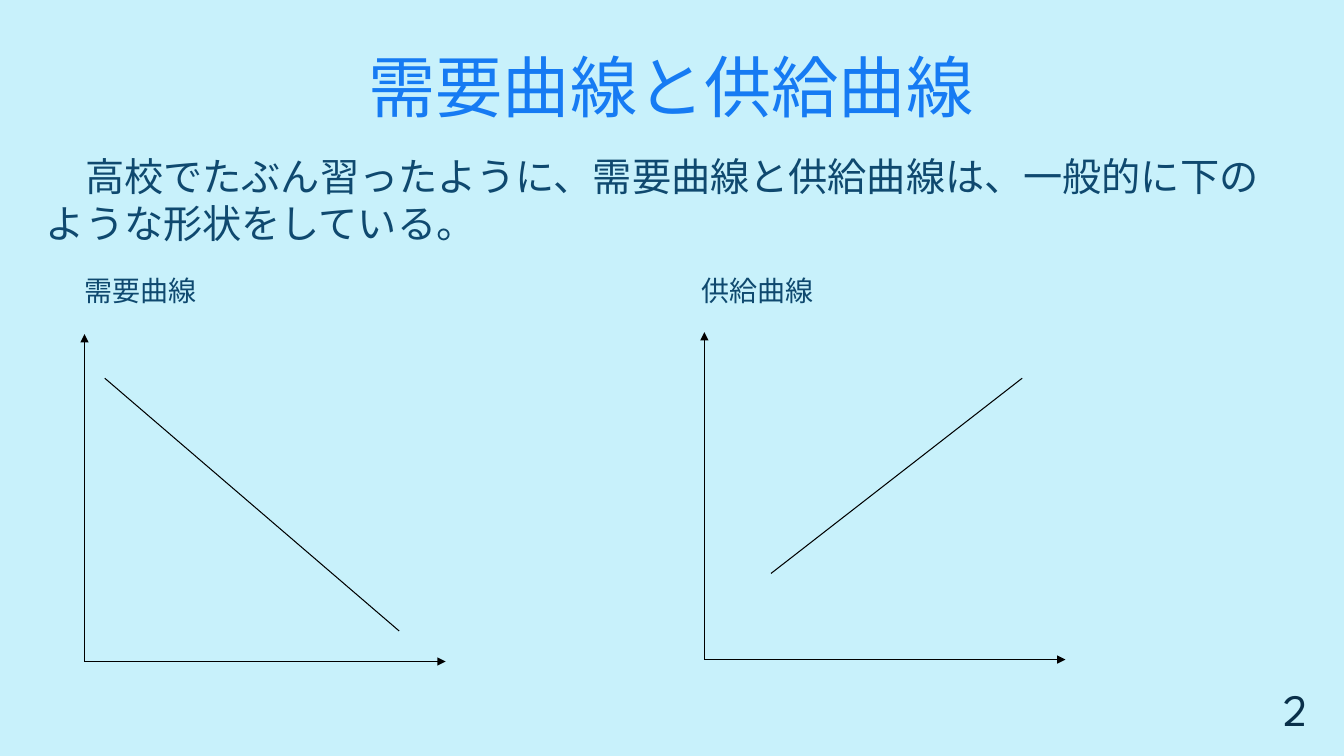
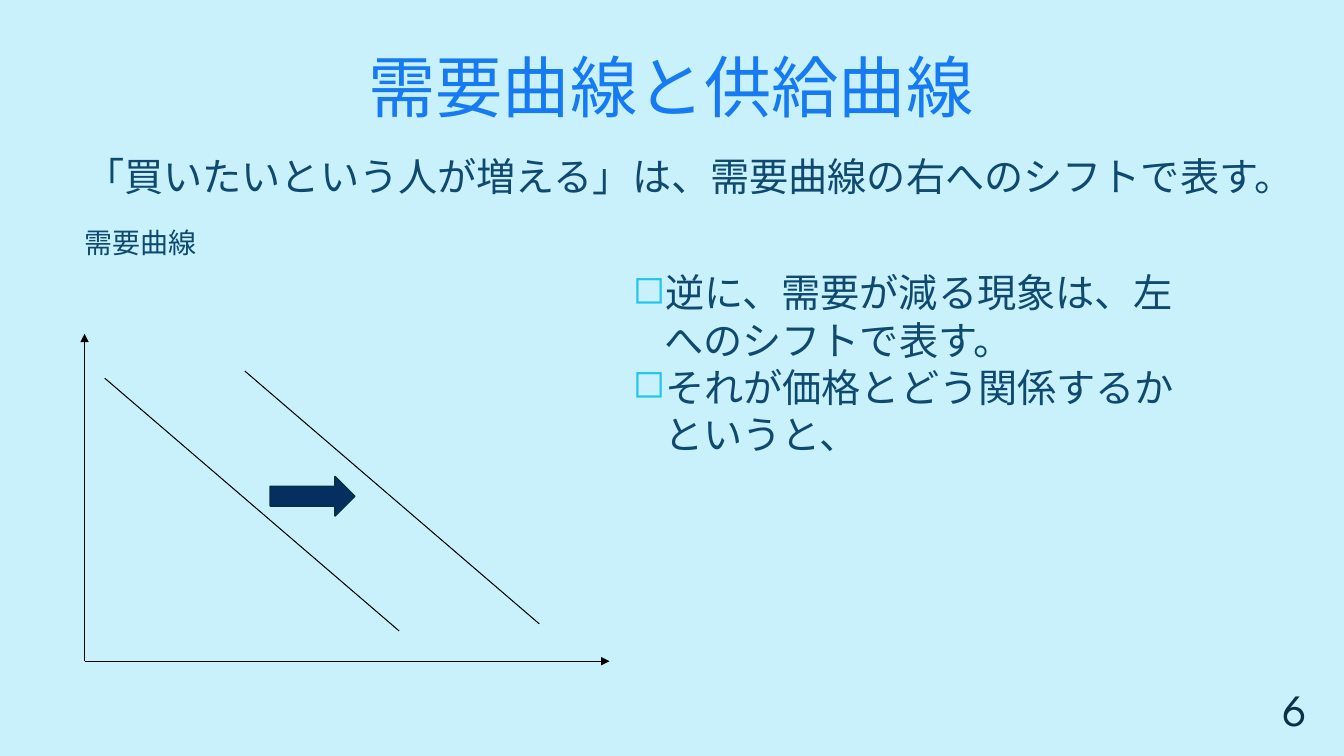
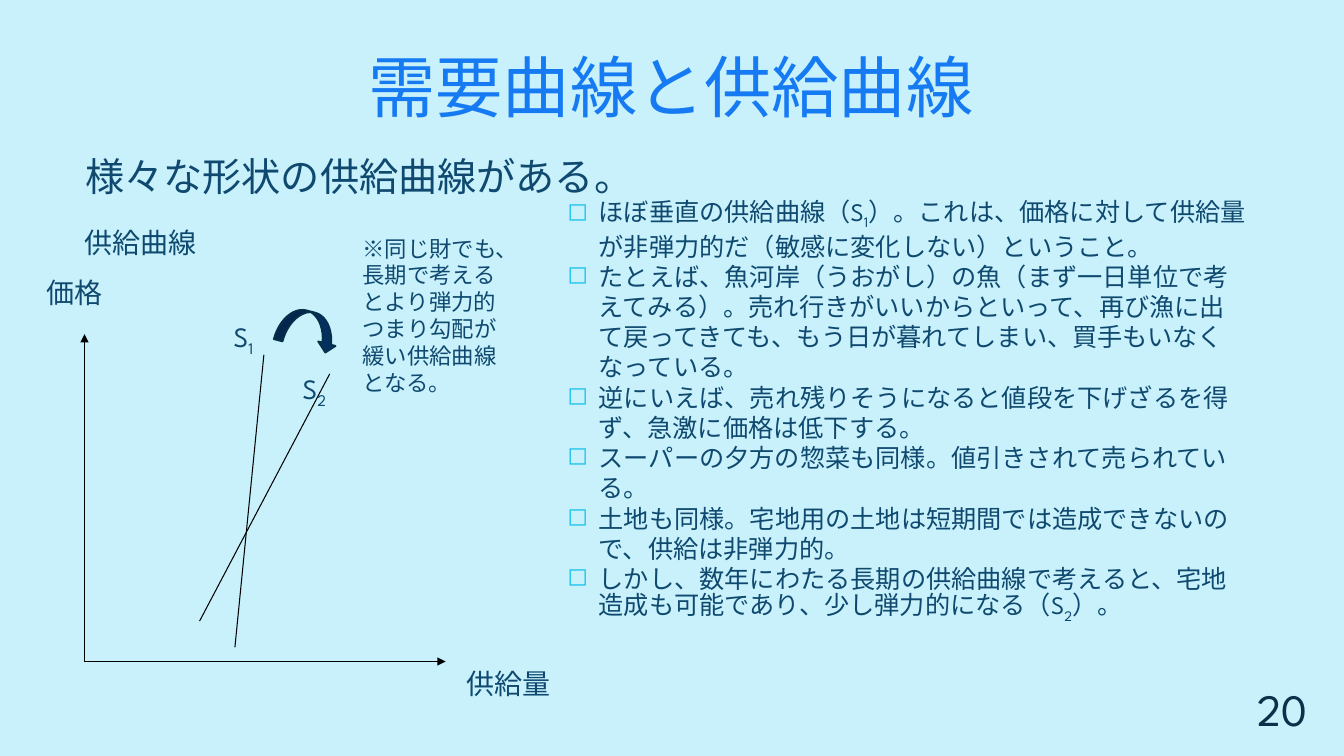
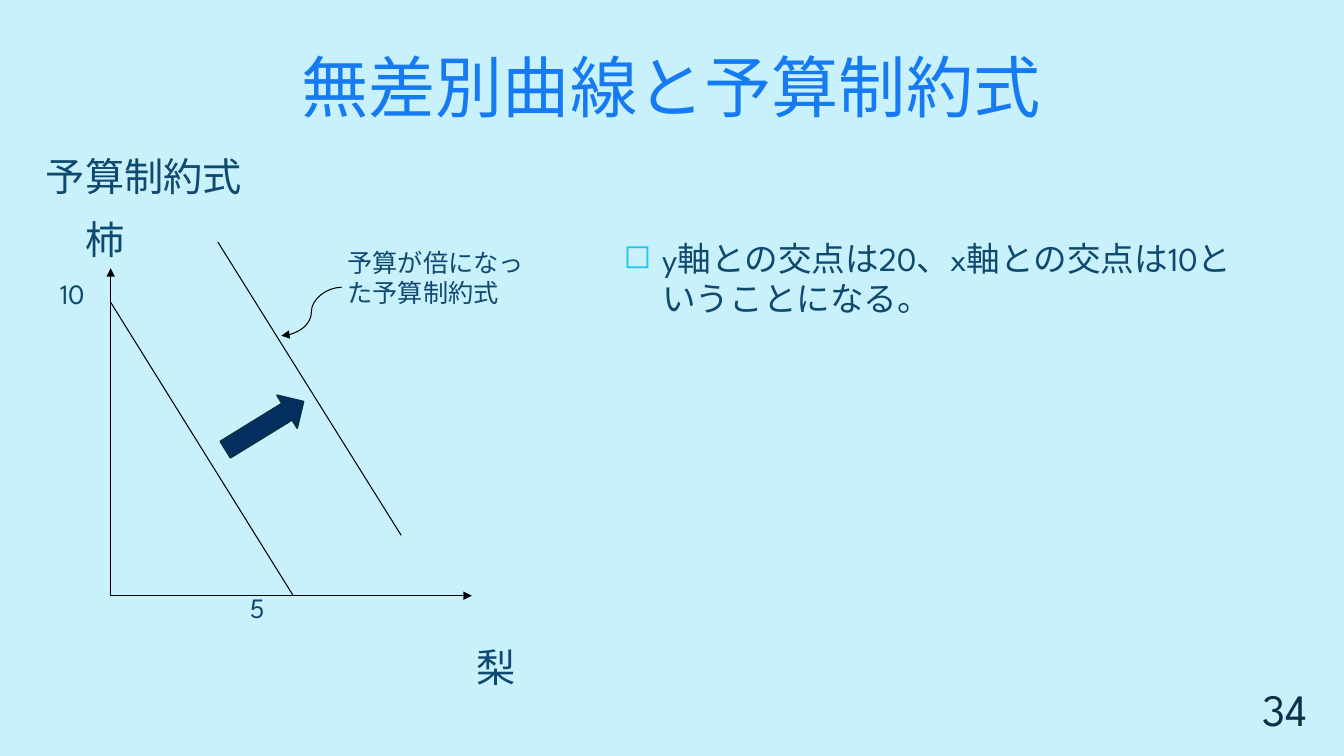
from dataclasses import dataclass

from lxml import etree
from pptx import Presentation
from pptx.dml.color import RGBColor
from pptx.enum import lang, shapes, text
from pptx.oxml import ns
from pptx.util import Cm, Pt


@dataclass(frozen=True)
class Theme:
    font: str = "League Spartan"
    line_height: float = 1.2
    background: str = "C8F1FB"
    title: str = "167BF3"
    body: str = "0F496F"
    number: str = "0A304A"
    bullet: str = "22C5ED"
    curve: str = "000000"
    arrow: str = "052F61"
    arrow_edge: str = "043148"
    title_size: int = 48
    number_size: int = 32
    lead_size: int = 28
    medium_size: int = 24
    label_size: int = 20
    small_size: int = 18
    note_size: int = 16


theme = Theme()
color = RGBColor.from_string


def add_text(page, content, left, top, width=4, height=1, box=None, size=theme.label_size,
             fill=theme.body, align=text.PP_ALIGN.LEFT, anchor=text.MSO_ANCHOR.TOP,
             indent=0, bullet_gap=0):
    """Write one paragraph per line of content; text between underscores is subscript."""
    box = box or page.shapes.add_textbox(0, 0, 0, 0)
    box.left, box.top, box.width, box.height = Cm(left), Cm(top), Cm(width), Cm(height)
    frame = box.text_frame
    frame.word_wrap = True
    frame.auto_size = text.MSO_AUTO_SIZE.NONE
    frame.vertical_anchor = anchor
    for row, line in enumerate(content.split("\n")):
        para = frame.add_paragraph() if row else frame.paragraphs[0]
        para.alignment = align
        para.line_spacing = Pt(size * theme.line_height)
        para.space_before = Pt(0)
        properties = para._p.get_or_add_pPr()
        properties.set("marL", str(Cm(bullet_gap)))
        properties.set("indent", str(Cm(indent - bullet_gap)))
        if bullet_gap:
            bullet_color = etree.SubElement(properties, ns.qn("a:buClr"))
            etree.SubElement(bullet_color, ns.qn("a:srgbClr"), val=theme.bullet)
            etree.SubElement(properties, ns.qn("a:buChar"), char="◻")
        for part, words in enumerate(line.split("_")):
            span = para.add_run()
            span.text = words
            span.font.size = Pt(size)
            span.font.name = theme.font
            span.font.color.rgb = color(fill)
            span.font.language_id = lang.MSO_LANGUAGE_ID.JAPANESE
            run_format = span._r.get_or_add_rPr()
            etree.SubElement(run_format, ns.qn("a:ea"), typeface=theme.font)
            if part % 2:
                run_format.set("baseline", "-25000")


def add_line(page, start, end, arrow=False, kind=shapes.MSO_CONNECTOR.STRAIGHT):
    line = page.shapes.add_connector(kind, *map(Cm, start + end))
    line.line.color.rgb = color(theme.curve)
    line.line.width = Pt(0.75)
    if arrow:
        etree.SubElement(line.line._get_or_add_ln(), ns.qn("a:tailEnd"), type="triangle")
    etree.SubElement(line._element.spPr, ns.qn("a:effectLst"))


deck = Presentation()
deck.slide_width, deck.slide_height = Cm(33.87), Cm(19.05)
master_fill = deck.slide_master.background.fill
master_fill.solid()
master_fill.fore_color.rgb = color(theme.background)

# Title, page number, opening sentence and its first-line indent
market = "需要曲線と供給曲線"
pages = []
for title, number, lead, indent in [
    (market, "2", "高校でたぶん習ったように、需要曲線と供給曲線は、一般的に下のような形状をしている。", 0.99),
    (market, "6", "「買いたいという人が増える」は、需要曲線の右へのシフトで表す。", 0.99),
    (market, "20", "様々な形状の供給曲線がある。", 0.99),
    ("無差別曲線と予算制約式", "34", "予算制約式", 0),
]:
    page = deck.slides.add_slide(deck.slide_layouts[5])
    add_text(page, title, 0.91, 0.91, 32, 2.39, box=page.shapes.title, size=theme.title_size,
             fill=theme.title, align=text.PP_ALIGN.CENTER, anchor=text.MSO_ANCHOR.BOTTOM)
    add_text(page, lead, 0.91, 3.71, 32, 2.6, size=theme.lead_size, indent=indent)
    add_text(page, number, 31.29, 17.12, 1.91, 1.55, size=theme.number_size, fill=theme.number,
             align=text.PP_ALIGN.RIGHT, anchor=text.MSO_ANCHOR.BOTTOM)
    pages.append(page)
shapes_page, shift_page, elasticity_page, budget_page = pages

# Axes: origin and length of the horizontal one
axis_height, axis_length = 8.25, 9.1
for page, x, y, length in [
    (shapes_page, 2.13, 16.67, axis_length),
    (shapes_page, 17.75, 16.62, axis_length),
    (shift_page, 2.13, 16.66, 13.23),
    (elasticity_page, 2.13, 16.67, axis_length),
    (budget_page, 2.79, 15.01, axis_length),
]:
    add_line(page, (x, y), (x, y - axis_height), arrow=True)
    add_line(page, (x, y), (x + length, y), arrow=True)

# Demand, supply and budget lines
demand = ((2.64, 9.53), (10.06, 15.9))
for page, start, end in [
    (shapes_page, *demand),
    (shapes_page, (19.43, 14.45), (25.76, 9.53)),
    (shift_page, *demand),
    (shift_page, (6.17, 9.35), (13.59, 15.72)),
    (elasticity_page, (6.65, 8.94), (5.92, 16.31)),
    (elasticity_page, (8.31, 9.42), (5.03, 15.65)),
    (budget_page, (2.79, 7.62), (7.39, 15.01)),
    (budget_page, (5.49, 6.1), (10.11, 13.49)),
]:
    add_line(page, start, end)
add_line(budget_page, (8.61, 7.24), (7.09, 8.46), arrow=True, kind=shapes.MSO_CONNECTOR.CURVE)

# Block arrows showing the shifts
right_arrow = shapes.MSO_SHAPE.RIGHT_ARROW
for page, kind, place, rotation in [
    (shift_page, right_arrow, (6.81, 12.01, 2.13, 0.99), 0),
    (elasticity_page, shapes.MSO_SHAPE.CURVED_DOWN_ARROW, (6.99, 7.85, 1.57, 0.91), 14.6),
    (budget_page, right_arrow, (5.51, 10.24, 2.31, 0.97), 328.4),
]:
    shift = page.shapes.add_shape(kind, *map(Cm, place))
    shift.rotation = rotation
    shift.shadow.inherit = False
    shift.fill.solid()
    shift.fill.fore_color.rgb = color(theme.arrow)
    shift.line.color.rgb = color(theme.arrow_edge)
    shift.line.width = Pt(1.25)

# Labels of graphs, axes and curves
for page, label, left, top, size in [
    (shapes_page, "需要曲線", 1.89, 6.76, theme.label_size),
    (shapes_page, "供給曲線", 17.43, 6.76, theme.label_size),
    (shift_page, "需要曲線", 1.89, 5.57, theme.label_size),
    (elasticity_page, "供給曲線", 1.89, 5.57, theme.label_size),
    (elasticity_page, "価格", 0.93, 6.83, theme.label_size),
    (elasticity_page, "S_1_", 5.64, 8.05, theme.label_size),
    (elasticity_page, "S_2_", 7.38, 9.36, theme.label_size),
    (elasticity_page, "供給量", 11.51, 16.66, theme.label_size),
    (budget_page, "柿", 1.91, 5.3, theme.lead_size),
    (budget_page, "10", 1.26, 6.84, theme.label_size),
    (budget_page, "5", 6.05, 14.75, theme.label_size),
    (budget_page, "梨", 11.77, 16.08, theme.lead_size),
]:
    add_text(page, label, left, top, size=size)

# Notes beside the graphs
add_text(elasticity_page, "※同じ財でも、長期で考えるとより弾力的つまり勾配が緩い供給曲線となる。",
         8.89, 5.79, 4.17, 4.37, size=theme.note_size)
add_text(budget_page, "予算が倍になった予算制約式", 8.51, 6.1, 5.08, 1.8, size=theme.small_size)

# Bulleted explanations
add_text(shift_page, "逆に、需要が減る現象は、左へのシフトで表す。\nそれが価格とどう関係するかというと、",
         15.7, 6.65, 14.76, 5.05, size=theme.lead_size, bullet_gap=0.79)
add_text(elasticity_page, "\n".join([
    "ほぼ垂直の供給曲線（S_1_）。これは、価格に対して供給量が非弾力的だ（敏感に変化しない）ということ。",
    "たとえば、魚河岸（うおがし）の魚（まず一日単位で考えてみる）。売れ行きがいいからといって、"
    "再び漁に出て戻ってきても、もう日が暮れてしまい、買手もいなくなっている。",
    "逆にいえば、売れ残りそうになると値段を下げざるを得ず、急激に価格は低下する。",
    "スーパーの夕方の惣菜も同様。値引きされて売られている。",
    "土地も同様。宅地用の土地は短期間では造成できないので、供給は非弾力的。",
    "しかし、数年にわたる長期の供給曲線で考えると、宅地造成も可能であり、少し弾力的になる（S_2_）。",
]), 14.05, 4.93, 17.7, 11.02, size=theme.small_size, bullet_gap=0.79)
add_text(budget_page, "y軸との交点は20、x軸との交点は10ということになる。",
         15.47, 5.87, 16.64, 2.31, size=theme.medium_size, bullet_gap=0.97)

deck.save("out.pptx")
